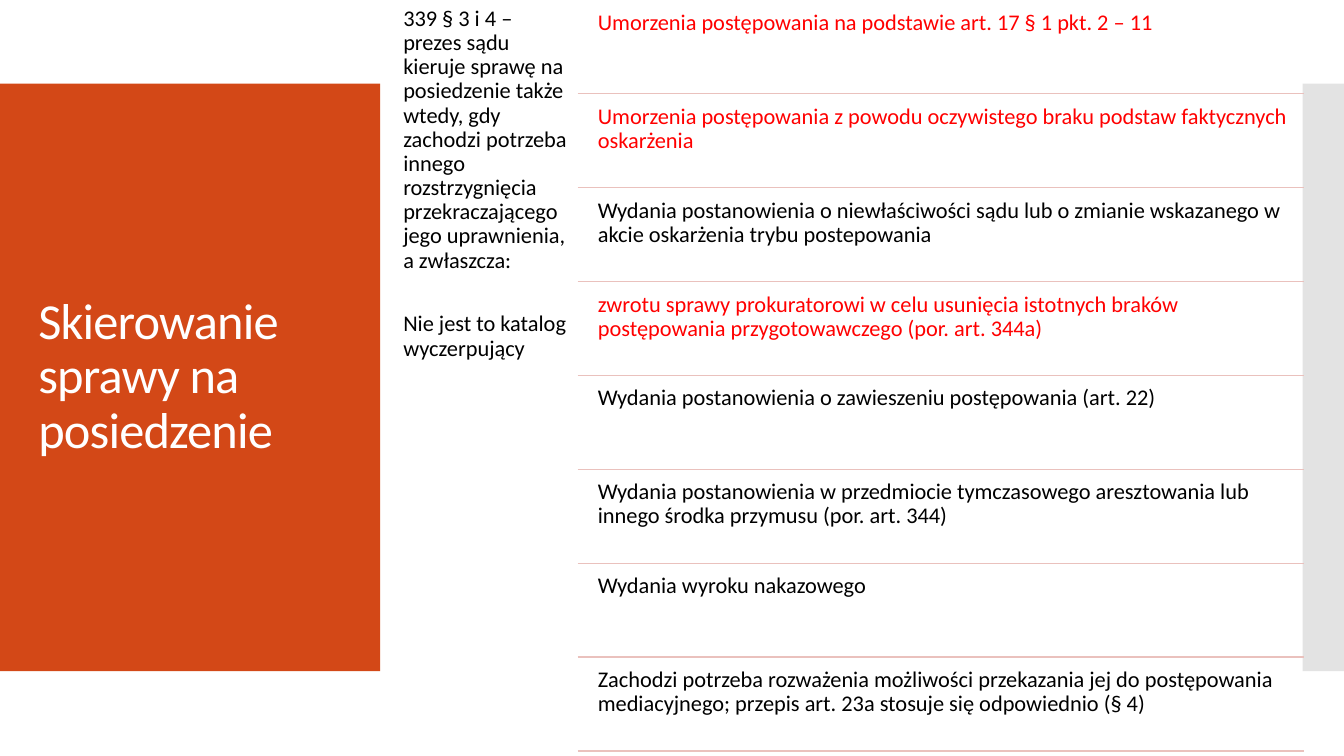
import pptx
import pptx.util
import pptx.dml.color
import pptx.enum.shapes
import pptx.enum.text
import pptx.oxml
import pptx.oxml.ns

Inches = pptx.util.Inches
Pt = pptx.util.Pt


def color(hex_value):
    return pptx.dml.color.RGBColor.from_string(hex_value)


def write(frame, paragraphs, size, hex_value, frame_format):
    for name, value in frame_format.items():
        setattr(frame, name, value)
    for index, wording in enumerate(paragraphs):
        paragraph = frame.add_paragraph() if index else frame.paragraphs[0]
        paragraph.alignment = pptx.enum.text.PP_ALIGN.LEFT
        paragraph.line_spacing = 0.9
        if index < len(paragraphs) - 1:
            paragraph.space_after = Pt(28.4)
        run = paragraph.add_run()
        run.text = wording
        for name, value in {"name": "Calibri", "size": Pt(size)}.items():
            setattr(run.font, name, value)
        run.font.color.rgb = color(hex_value)


presentation = pptx.Presentation()
presentation.slide_width = Inches(13.33)
presentation.slide_height = Inches(7.5)
slide = presentation.slides.add_slide(presentation.slide_layouts[5])
shapes = slide.shapes

# Side panels: left, width, colour, opacity in percent
for left, width, fill, opacity in [(0, 3.77, "D34817", 100), (12.92, 0.41, "C8C8C8", 50)]:
    panel = shapes.add_shape(pptx.enum.shapes.MSO_SHAPE.RECTANGLE,
                             Inches(left), Inches(0.83), Inches(width), Inches(5.83))
    panel.shadow.inherit = False
    panel.line.fill.background()
    panel.fill.solid()
    panel.fill.fore_color.rgb = color(fill)
    if opacity < 100:
        tint = panel.element.find(".//" + pptx.oxml.ns.qn("a:srgbClr"))
        tint.append(pptx.oxml.parse_xml(
            f'<a:alpha {pptx.oxml.ns.nsdecls("a")} val="{opacity * 1000}"/>'))

# Title, brought in front of the orange panel
title = shapes.title
title_place = {"left": 0.28, "top": 1.23, "width": 3.22, "height": 5.03}
for name, value in title_place.items():
    setattr(title, name, Inches(value))
title.element.getparent().append(title.element)
write(title.text_frame, ["Skierowanie sprawy na posiedzenie"], 36, "FFFFFF", {
    "word_wrap": True,
    "auto_size": pptx.enum.text.MSO_AUTO_SIZE.NONE,
    "vertical_anchor": pptx.enum.text.MSO_ANCHOR.MIDDLE,
})
title.text_frame.paragraphs[0].runs[0].font._element.set("spc", "-60")

body_format = {
    "word_wrap": True,
    "vertical_anchor": pptx.enum.text.MSO_ANCHOR.TOP,
    "margin_left": Inches(0.07),
    "margin_top": Inches(0.07),
    "margin_right": Inches(0.07),
    "margin_bottom": Inches(0.07),
}

# Legal basis beside the list
legal_basis = shapes.add_textbox(Inches(3.93), 0, Inches(1.8), Inches(7.5))
write(legal_basis.text_frame, [
    "339 § 3 i 4 – prezes sądu kieruje sprawę na posiedzenie także wtedy, gdy zachodzi "
    "potrzeba innego rozstrzygnięcia przekraczającego jego uprawnienia, a zwłaszcza:",
    "Nie jest to katalog wyczerpujący",
], 16, "000000", body_format)

# Grounds for a sitting, each with a divider below
RED, BLACK = "FF0000", "000000"
grounds = [
    ("Umorzenia postępowania na podstawie art. 17 § 1 pkt. 2 – 11", RED),
    ("Umorzenia postępowania z powodu oczywistego braku podstaw faktycznych oskarżenia", RED),
    ("Wydania postanowienia o niewłaściwości sądu lub o zmianie wskazanego w akcie "
     "oskarżenia trybu postepowania", BLACK),
    ("zwrotu sprawy prokuratorowi w celu usunięcia istotnych braków postępowania "
     "przygotowawczego (por. art. 344a)", RED),
    ("Wydania postanowienia o zawieszeniu postępowania (art. 22)", BLACK),
    ("Wydania postanowienia w przedmiocie tymczasowego aresztowania lub innego środka "
     "przymusu (por. art. 344)", BLACK),
    ("Wydania wyroku nakazowego", BLACK),
    ("Zachodzi potrzeba rozważenia możliwości przekazania jej do postępowania "
     "mediacyjnego; przepis art. 23a stosuje się odpowiednio (§ 4)", BLACK),
]
row_pitch = 7.45 / len(grounds)
for row, (wording, hex_value) in enumerate(grounds):
    top = 0.04 + row * row_pitch
    ground = shapes.add_textbox(Inches(5.86), Inches(top), Inches(7.07), Inches(0.89))
    write(ground.text_frame, [wording], 16, hex_value, body_format)

    divider_y = Inches((row + 1) * row_pitch)
    divider = shapes.add_connector(pptx.enum.shapes.MSO_CONNECTOR.STRAIGHT,
                                   Inches(5.73), divider_y, Inches(12.93), divider_y)
    divider.line.color.rgb = color("EAC1BD")
    divider.line.width = Pt(0.85)
    divider.element.spPr.append(pptx.oxml.parse_xml(
        f'<a:effectLst {pptx.oxml.ns.nsdecls("a")}/>'))

presentation.save("out.pptx")
